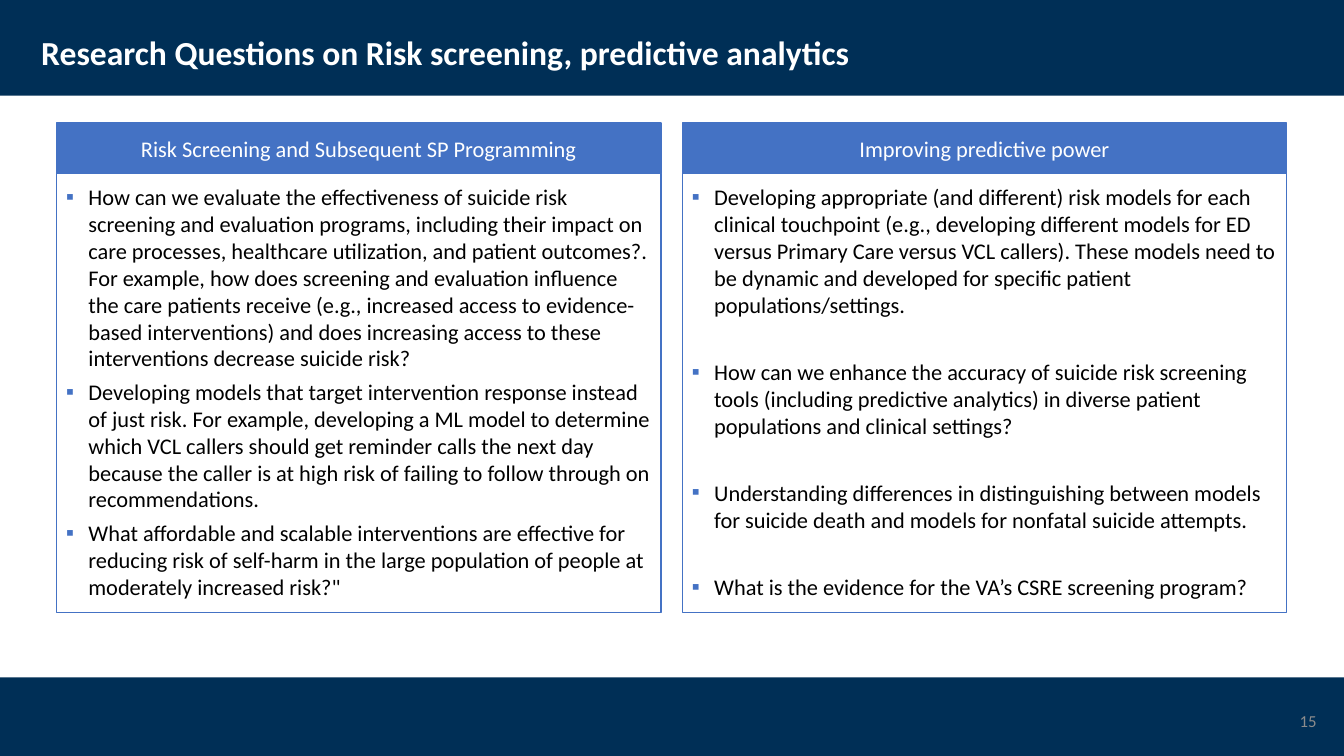
from lxml import etree
from pptx import Presentation
from pptx.dml.color import RGBColor
from pptx.enum.shapes import MSO_SHAPE
from pptx.enum.text import MSO_ANCHOR, PP_ALIGN
from pptx.oxml.ns import qn
from pptx.util import Cm, Pt

RECT = MSO_SHAPE.RECTANGLE
TOP, MIDDLE = MSO_ANCHOR.TOP, MSO_ANCHOR.MIDDLE
LEFT, CENTER, RIGHT = PP_ALIGN.LEFT, PP_ALIGN.CENTER, PP_ALIGN.RIGHT

FONT = "Calibri"
COLORS = {
    "navy": "002F56",
    "blue": "4472C4",
    "white": "FFFFFF",
    "black": "000000",
    "gray": "8C8C8C",
}

# Slide and panel measures in cm
WIDTH, HEIGHT = 33.87, 19.05
PANEL_X, PANEL_Y, PANEL_W, STEP = 1.42, 3.1, 15.24, 15.77
HEAD_H, BODY_H = 1.27, 11.07
INDENT = 0.56

# Heading, space between points in pt, points
PANELS = [
    ("Risk Screening and Subsequent SP Programming", 4.8, [
        "How can we evaluate the effectiveness of suicide risk screening and "
        "evaluation programs, including their impact on care processes, "
        "healthcare utilization, and patient outcomes?. For example, how does "
        "screening and evaluation influence the care patients receive (e.g., "
        "increased access to evidence-based interventions) and does increasing "
        "access to these interventions decrease suicide risk?",
        "Developing models that target intervention response instead of just "
        "risk. For example, developing a ML model to determine which VCL callers "
        "should get reminder calls the next day because the caller is at high "
        "risk of failing to follow through on recommendations.",
        "What affordable and scalable interventions are effective for reducing "
        "risk of self-harm in the large population of people at moderately "
        "increased risk?\"",
    ]),
    ("Improving predictive power", 28.8, [
        "Developing appropriate (and different) risk models for each clinical "
        "touchpoint (e.g., developing different models for ED versus Primary Care "
        "versus VCL callers). These models need to be dynamic and developed for "
        "specific patient populations/settings.",
        "How can we enhance the accuracy of suicide risk screening tools "
        "(including predictive analytics) in diverse patient populations and "
        "clinical settings?",
        "Understanding differences in distinguishing between models for suicide "
        "death and models for nonfatal suicide attempts.",
        "What is the evidence for the VA’s CSRE screening program?",
    ]),
]


def rgb(name):
    return RGBColor.from_string(COLORS[name])


def add_rect(slide, x, y, w, h, fill, line=None):
    rect = slide.shapes.add_shape(RECT, Cm(x), Cm(y), Cm(w), Cm(h))
    rect.shadow.inherit = False
    rect.fill.solid()
    rect.fill.fore_color.rgb = rgb(fill)
    if line:
        rect.line.color.rgb = rgb(line)
        rect.line.width = Pt(0.75)
    else:
        rect.line.fill.background()
    return rect


def set_frame(shape, anchor, pad):
    frame = shape.text_frame
    frame.word_wrap = True
    frame.vertical_anchor = anchor
    frame.margin_left = frame.margin_right = Cm(0.25)
    frame.margin_top = frame.margin_bottom = Cm(pad)
    return frame


def set_text(para, text, size, color, align=LEFT, bold=False):
    para.text = text
    para.alignment = align
    para.font.name = FONT
    para.font.size = Pt(size)
    para.font.bold = bold
    para.font.color.rgb = rgb(color)


def add_label(slide, x, y, w, h, *style):
    box = slide.shapes.add_textbox(Cm(x), Cm(y), Cm(w), Cm(h))
    set_text(set_frame(box, MIDDLE, 0.13).paragraphs[0], *style)


def add_bullet(para):
    props = para._p.get_or_add_pPr()
    props.set("marL", str(Cm(INDENT)))
    props.set("indent", str(-Cm(INDENT)))
    tint = etree.SubElement(props, qn("a:buClr"))
    etree.SubElement(tint, qn("a:srgbClr"), val=COLORS["blue"])
    etree.SubElement(props, qn("a:buFont"), typeface=FONT)
    etree.SubElement(props, qn("a:buChar"), char="▪")


def add_panel(slide, x, title, gap, points):
    body = add_rect(slide, x, PANEL_Y + HEAD_H, PANEL_W, BODY_H, "white", "blue")
    frame = set_frame(body, TOP, 0.25)
    for i, point in enumerate(points):
        para = frame.add_paragraph() if i else frame.paragraphs[0]
        add_bullet(para)
        set_text(para, point, 16, "black")
        if i:
            para.space_before = Pt(gap)

    head = add_rect(slide, x, PANEL_Y, PANEL_W, HEAD_H, "blue", "blue")
    para = set_frame(head, MIDDLE, 0.13).paragraphs[0]
    set_text(para, title, 16, "white", CENTER)


def main():
    prs = Presentation()
    prs.slide_width, prs.slide_height = Cm(WIDTH), Cm(HEIGHT)
    slide = prs.slides.add_slide(prs.slide_layouts[6])

    # Header and footer bands
    add_rect(slide, 0, 0, WIDTH, 2.41, "navy")
    add_rect(slide, 0, 17.07, WIDTH, HEIGHT - 17.07, "navy")

    # Title and slide number
    add_label(slide, 0.79, 0.46, 31.85, 1.73,
              "Research Questions on Risk screening, predictive analytics",
              24, "white", LEFT, True)
    add_label(slide, 25.81, 17.65, 7.62, 1.02, "15", 12, "gray", RIGHT)

    # Question panels
    for i, (title, gap, points) in enumerate(PANELS):
        add_panel(slide, PANEL_X + i * STEP, title, gap, points)

    prs.save("out.pptx")


if __name__ == "__main__":
    main()
